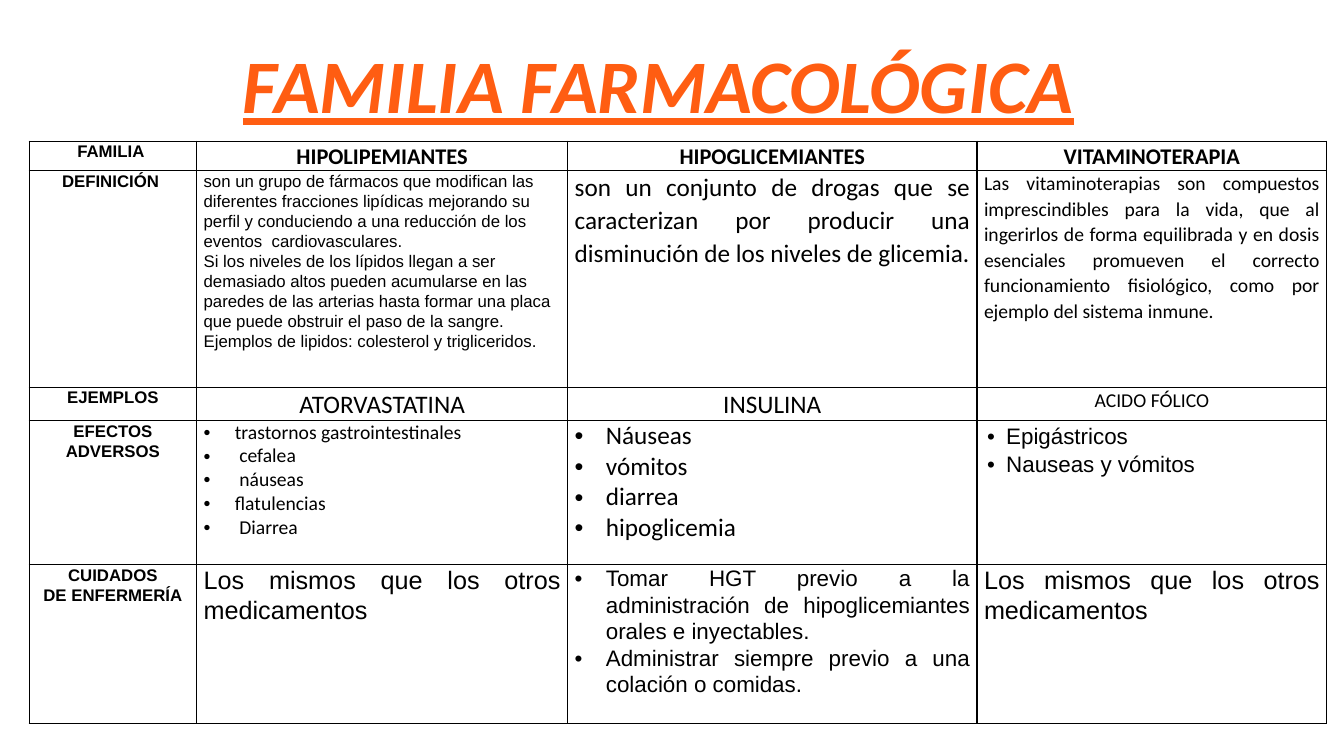
"""Build a slide with a table comparing three pharmacological families."""
from lxml.etree import SubElement
from pptx import Presentation
from pptx.dml.color import RGBColor
from pptx.enum.text import MSO_ANCHOR, PP_ALIGN
from pptx.oxml.ns import qn
from pptx.util import Inches, Pt

BLACK = RGBColor(0x00, 0x00, 0x00)
ORANGE = RGBColor(0xFF, 0x5D, 0x12)

TITLE = "FAMILIA FARMACOLÓGICA"
TITLE_FONT = {"name": "Calibri", "size": Pt(54), "bold": True, "italic": True, "underline": True}
TITLE_BOX = (2.25, 0.33, 8.56, 1.01)
TABLE_LEFT, TABLE_TOP = 0.29, 1.4
COLUMN_WIDTHS = (1.66, 3.68, 4.06, 3.47)
ROW_HEIGHTS = (0.29, 2.15, 0.33, 1.43, 1.58)
SIDE_MARGIN = 0.07

LEFT = {"alignment": PP_ALIGN.LEFT, "line_spacing": 1.07}
CENTER = {"alignment": PP_ALIGN.CENTER, "line_spacing": 1.07}
JUSTIFY = {"alignment": PP_ALIGN.JUSTIFY, "line_spacing": 1.07}
SINGLE = {"alignment": PP_ALIGN.LEFT, "line_spacing": 1.0}
LOOSE = {"alignment": PP_ALIGN.LEFT, "line_spacing": 1.15}

SAME_CARE = ["Los mismos que los otros medicamentos"]


def entry(lines, font, size, layout, bold=False, indent=0, margin=SIDE_MARGIN):
    """Describe the content of one cell."""
    return {"lines": lines, "font": {"name": font, "size": Pt(size), "bold": bold},
            "layout": layout, "indent": indent, "margin": margin}


def label(*lines):
    """Describe a row label."""
    return entry(lines, "Arial", 12, CENTER, bold=True)


def family(name):
    """Describe a column heading."""
    return entry([name], "Calibri", 16, CENTER, bold=True)


ROWS = [
    [label("FAMILIA "), family("HIPOLIPEMIANTES"), family("HIPOGLICEMIANTES"),
     family("VITAMINOTERAPIA")],
    [label("DEFINICIÓN "),
     entry(["son un grupo de fármacos que modifican las diferentes fracciones lipídicas "
            "mejorando su perfil y conduciendo a una reducción de los eventos  cardiovasculares.",
            "Si los niveles de los lípidos llegan a ser demasiado altos pueden acumularse en las "
            "paredes de las arterias hasta formar una placa que puede obstruir el paso de la sangre.",
            "Ejemplos de lipidos: colesterol y trigliceridos."], "Arial", 12, LEFT),
     entry(["son un conjunto de drogas que se caracterizan por producir una disminución "
            "de los niveles de glicemia."], "Calibri", 18, JUSTIFY),
     entry(["Las vitaminoterapias son compuestos imprescindibles para la vida, que al ingerirlos "
            "de forma equilibrada y en dosis esenciales promueven el correcto funcionamiento "
            "fisiológico, como por ejemplo del sistema inmune."], "Calibri", 14, JUSTIFY)],
    [label("EJEMPLOS"),
     entry(["ATORVASTATINA"], "Calibri", 18, CENTER),
     entry(["INSULINA"], "Calibri", 18, CENTER),
     entry(["ACIDO FÓLICO"], "Calibri", 14, CENTER)],
    [label("EFECTOS ADVERSOS"),
     entry(["trastornos gastrointestinales", " cefalea", " náuseas", "flatulencias", " Diarrea"],
           "Calibri", 14, SINGLE, indent=0.31),
     entry(["Náuseas", "vómitos", "diarrea", "hipoglicemia"], "Calibri", 18, SINGLE, indent=0.31),
     entry(["Epigástricos", "Nauseas y vómitos"], "Arial", 16, LOOSE, indent=0.19, margin=0.1)],
    [label("CUIDADOS", "DE ENFERMERÍA"),
     entry(SAME_CARE, "Arial", 18, JUSTIFY),
     entry(["Tomar HGT previo a la administración de hipoglicemiantes orales e inyectables.",
            "Administrar siempre previo a una colación o comidas. "],
           "Arial", 16, JUSTIFY, indent=0.31),
     entry(SAME_CARE, "Arial", 18, JUSTIFY)],
]


def apply(target, values):
    """Set each named attribute on the target."""
    for name, value in values.items():
        setattr(target, name, value)


def write(paragraph, text, font, color, layout):
    """Write one formatted paragraph."""
    run = paragraph.add_run()
    run.text = text
    apply(run.font, font)
    run.font.color.rgb = color
    apply(paragraph, layout)


def add_bullet(paragraph, indent):
    """Give a paragraph a round bullet with a hanging indent."""
    properties = paragraph._p.get_or_add_pPr()
    properties.set("marL", str(Inches(indent)))
    properties.set("indent", str(-Inches(indent)))
    SubElement(properties, qn("a:buFont"), typeface="Arial")
    SubElement(properties, qn("a:buChar"), char="•")


def add_borders(cell):
    """Draw a thin black line on the four sides of a cell."""
    properties = cell._tc.get_or_add_tcPr()
    for side in ("a:lnL", "a:lnR", "a:lnT", "a:lnB"):
        line = SubElement(properties, qn(side), w=str(Pt(1)))
        SubElement(SubElement(line, qn("a:solidFill")), qn("a:srgbClr"), val=str(BLACK))


def fill_cell(cell, content):
    """Format a cell and write its paragraphs."""
    margin = Inches(content["margin"])
    apply(cell, {"margin_left": margin, "margin_right": margin, "margin_top": 0,
                 "margin_bottom": 0, "vertical_anchor": MSO_ANCHOR.TOP})
    add_borders(cell)
    cell.fill.background()
    frame = cell.text_frame
    for index, text in enumerate(content["lines"]):
        paragraph = frame.add_paragraph() if index else frame.paragraphs[0]
        write(paragraph, text, content["font"], BLACK, content["layout"])
        if content["indent"]:
            add_bullet(paragraph, content["indent"])


def main():
    """Assemble and save the slide."""
    deck = Presentation()
    deck.slide_width, deck.slide_height = Inches(13.33), Inches(7.5)
    slide = deck.slides.add_slide(deck.slide_layouts[6])

    families = slide.shapes.add_table(
        len(ROWS), len(COLUMN_WIDTHS), Inches(TABLE_LEFT), Inches(TABLE_TOP),
        Inches(sum(COLUMN_WIDTHS)), Inches(sum(ROW_HEIGHTS))).table
    apply(families, {"first_row": False, "horz_banding": False})
    for column, width in zip(families.columns, COLUMN_WIDTHS):
        column.width = Inches(width)
    for row, height, contents in zip(families.rows, ROW_HEIGHTS, ROWS):
        row.height = Inches(height)
        for cell, content in zip(row.cells, contents):
            fill_cell(cell, content)

    title = slide.shapes.add_textbox(*map(Inches, TITLE_BOX)).text_frame
    title.word_wrap = False
    write(title.paragraphs[0], TITLE, TITLE_FONT, ORANGE, {"alignment": PP_ALIGN.CENTER})
    deck.save("out.pptx")


if __name__ == "__main__":
    main()
